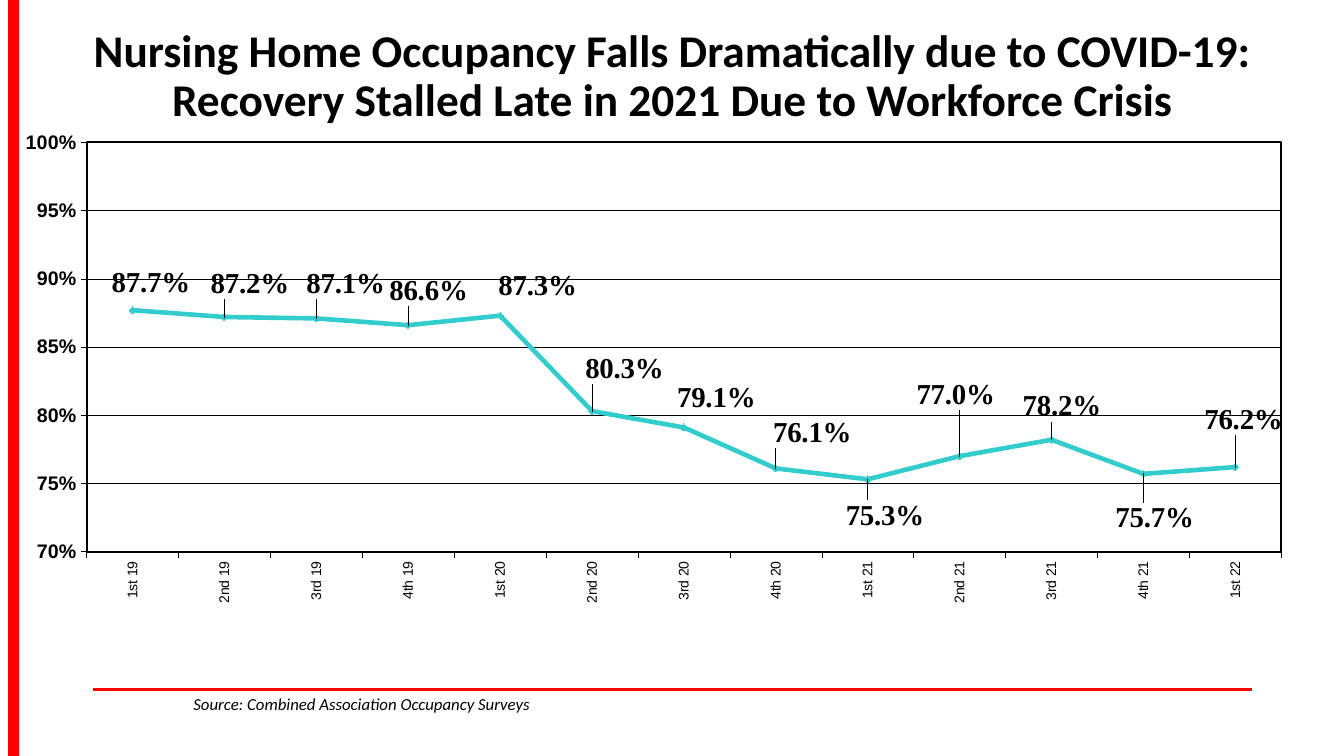
from lxml import etree
from pptx import Presentation
from pptx.chart.data import CategoryChartData
from pptx.dml.color import RGBColor
from pptx.enum.chart import XL_CHART_TYPE, XL_LABEL_POSITION as LabelPosition
from pptx.enum.chart import XL_MARKER_STYLE as MarkerStyle, XL_TICK_MARK as TickMark
from pptx.enum.shapes import MSO_CONNECTOR, MSO_SHAPE
from pptx.enum.text import MSO_ANCHOR, PP_ALIGN
from pptx.oxml import parse_xml
from pptx.oxml.ns import nsdecls, qn
from pptx.util import Inches, Pt

# Content
TITLE = ("Nursing Home Occupancy Falls Dramatically due to COVID-19:\v"
         "Recovery Stalled Late in 2021 Due to Workforce Crisis")
SOURCE = "Source: Combined Association Occupancy Surveys"
# Quarter, occupancy, label centre right of and below its point (inches)
OCCUPANCY = [
    ("1st 19", 0.877, 0.18, -0.27),
    ("2nd 19", 0.872, 0.25, -0.33),
    ("3rd 19", 0.871, 0.29, -0.34),
    ("4th 19", 0.866, 0.20, -0.34),
    ("1st 20", 0.873, 0.37, -0.29),
    ("2nd 20", 0.803, 0.32, -0.42),
    ("3rd 20", 0.791, 0.32, -0.29),
    ("4th 20", 0.761, 0.36, -0.35),
    ("1st 21", 0.753, 0.17, 0.36),
    ("2nd 21", 0.770, -0.04, -0.61),
    ("3rd 21", 0.782, 0.10, -0.33),
    ("4th 21", 0.757, 0.11, 0.44),
    ("1st 22", 0.762, 0.08, -0.47),
]
CHART_WIDTH, CHART_HEIGHT = 13.05, 5.4

BLACK = RGBColor(0, 0, 0)
RED = RGBColor(0xFF, 0, 0)
TEAL = RGBColor(0x33, 0xCC, 0xCC)


def style_font(font, name, size, bold=False, italic=False):
    font.name, font.size = name, Pt(size)
    font.bold, font.italic = bold, italic
    font.color.rgb = BLACK


def style_line(line, color, width):
    line.color.rgb = color
    line.width = Pt(width)


def manual_layout(**settings):
    tags = "".join(f'<c:{tag} val="{value}"/>' for tag, value in settings.items())
    return parse_xml(f'<c:layout {nsdecls("c")}><c:manualLayout>{tags}'
                     '</c:manualLayout></c:layout>')


presentation = Presentation()
presentation.slide_width, presentation.slide_height = Inches(13.33), Inches(7.5)
slide = presentation.slides.add_slide(presentation.slide_layouts[5])
shapes = slide.shapes

# Red side bar and footer rule
side_bar = shapes.add_shape(MSO_SHAPE.RECTANGLE, Inches(0.08), 0, Inches(0.11), Inches(7.5))
side_bar.shadow.inherit = False
side_bar.fill.solid()
side_bar.fill.fore_color.rgb = RED
side_bar.line.fill.background()

footer_rule = shapes.add_connector(MSO_CONNECTOR.STRAIGHT, Inches(0.92), Inches(6.84),
                                   Inches(12.42), Inches(6.84))
style_line(footer_rule.line, RED, 2)
etree.SubElement(footer_rule._element.spPr, qn("a:effectLst"))

# Title
title = shapes.title
title.left, title.top = Inches(0.74), Inches(0.33)
title.width, title.height = Inches(11.86), Inches(0.87)
title.text_frame.text = TITLE
title.text_frame.vertical_anchor = MSO_ANCHOR.MIDDLE
paragraph = title.text_frame.paragraphs[0]
paragraph.alignment = PP_ALIGN.CENTER
paragraph.line_spacing = 0.9
for run in paragraph.runs:
    style_font(run.font, "Calibri", 32.4, bold=True)

# Occupancy chart
chart_data = CategoryChartData(number_format="0.0%")
chart_data.categories = [row[0] for row in OCCUPANCY]
chart_data.add_series("Series 1", [row[1] for row in OCCUPANCY])
chart = shapes.add_chart(XL_CHART_TYPE.LINE_MARKERS, Inches(0.05), Inches(0.9),
                         Inches(CHART_WIDTH), Inches(CHART_HEIGHT), chart_data).chart
chart.has_legend = chart.has_title = False
style_font(chart.font, "Times New Roman", 20.6, bold=True)

# Clear chart background, fixed and framed plot area
chart_xml = chart._chartSpace.find(qn("c:chart"))
chart_xml.addnext(parse_xml(f'<c:spPr {nsdecls("c", "a")}><a:noFill/>'
                            '<a:ln><a:noFill/></a:ln></c:spPr>'))
plot_area = chart_xml.find(qn("c:plotArea"))
for layout in plot_area.findall(qn("c:layout")):
    plot_area.remove(layout)
plot_area.insert(0, manual_layout(layoutTarget="inner", xMode="edge", yMode="edge",
                                  x=0.062, y=0.095, w=0.908, h=0.752))
plot_area.append(parse_xml(
    f'<c:spPr {nsdecls("c", "a")}><a:noFill/><a:ln w="{Pt(1.5)}"><a:solidFill>'
    f'<a:srgbClr val="{BLACK}"/></a:solidFill></a:ln></c:spPr>'))

# Axes
quarter_axis, percent_axis = chart.category_axis, chart.value_axis
for axis, size, bold in ((quarter_axis, 10, False), (percent_axis, 14, True)):
    axis.major_tick_mark, axis.minor_tick_mark = TickMark.OUTSIDE, TickMark.NONE
    style_font(axis.tick_labels.font, "Arial", size, bold)
    style_line(axis.format.line, BLACK, 0.27)
quarter_axis._element.find(f'{qn("c:txPr")}/{qn("a:bodyPr")}').set("rot", "-5400000")
percent_axis.minimum_scale, percent_axis.maximum_scale = 0.7, 1
percent_axis.major_unit = 0.05
percent_axis.tick_labels.number_format = "0%"
percent_axis.tick_labels.number_format_is_linked = False
percent_axis.has_major_gridlines = True
style_line(percent_axis.major_gridlines.format.line, BLACK, 0.27)

# Line and markers
plot = chart.plots[0]
plot.vary_by_categories = False
series = plot.series[0]
series.smooth = False
style_line(series.format.line, TEAL, 3.29)
series.marker.style, series.marker.size = MarkerStyle.DIAMOND, 5
series.marker.format.fill.solid()
series.marker.format.fill.fore_color.rgb = TEAL
series.marker.format.line.color.rgb = TEAL

# Value labels, each shifted from its point
labels = series.data_labels
labels.show_value = True
labels.number_format, labels.number_format_is_linked = "0.0%", False
style_font(labels.font, "Times New Roman", 20.6, bold=True)
for index in range(len(OCCUPANCY)):
    label = series.points[index].data_label
    style_font(label.font, "Times New Roman", 20.6, bold=True)
    label.position = LabelPosition.CENTER
for label_xml, (_, _, right, down) in zip(labels._element.findall(qn("c:dLbl")), OCCUPANCY):
    layout = manual_layout(x=round(right / CHART_WIDTH, 4), y=round(down / CHART_HEIGHT, 4))
    label_xml.find(qn("c:idx")).addnext(layout)
    layout.addnext(parse_xml(f'<c:numFmt {nsdecls("c")} formatCode="0.0%" sourceLinked="0"/>'))

# Source note
source_box = shapes.add_textbox(Inches(1.82), Inches(6.83), Inches(5.27), Inches(0.5))
source_box.text_frame.word_wrap = True
source_box.text_frame.text = SOURCE
style_font(source_box.text_frame.paragraphs[0].runs[0].font, "Calibri", 12, italic=True)

presentation.save("out.pptx")
